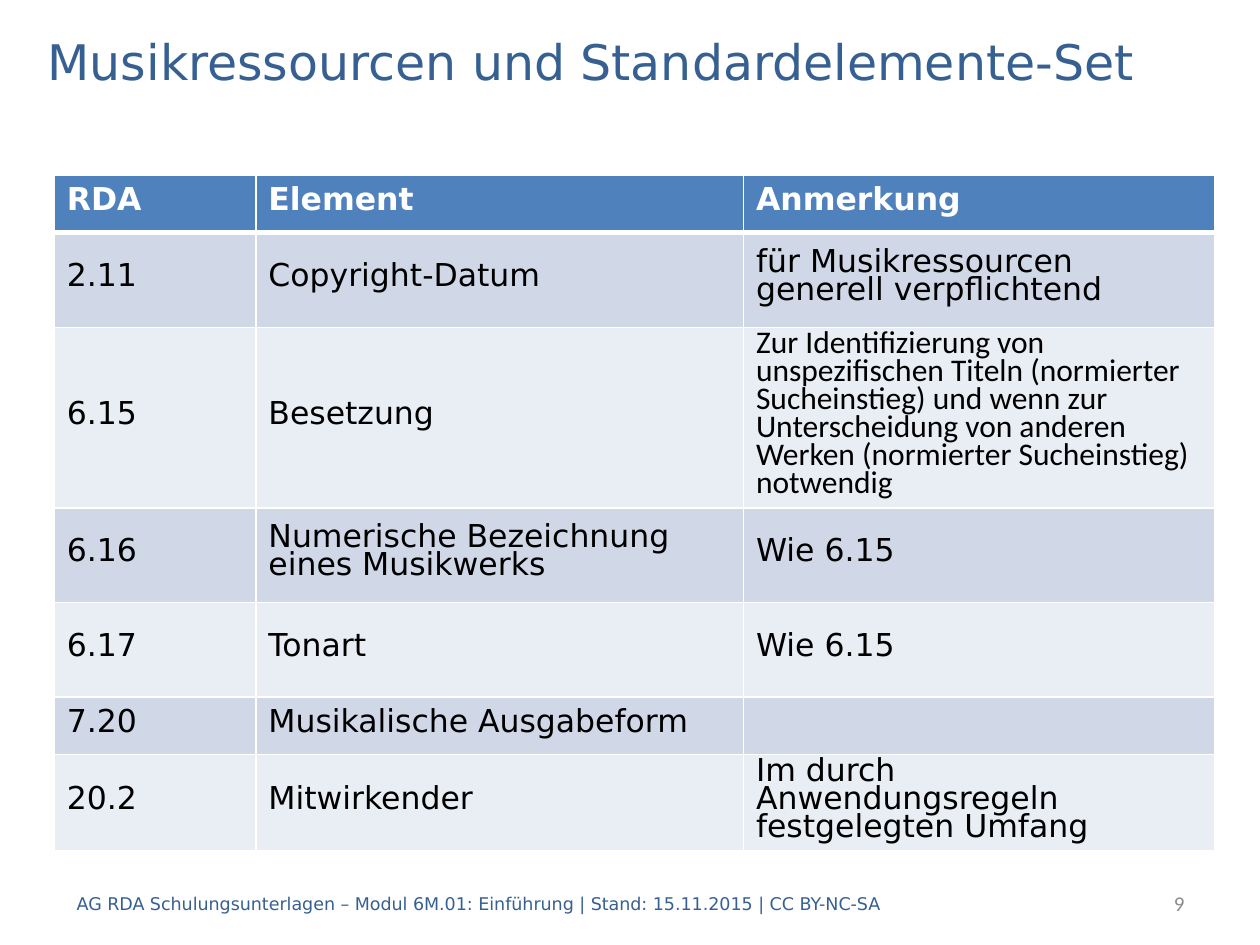
"""Build a slide with a table of music elements in the RDA standard set."""
import lxml.etree
import pptx
import pptx.dml.color
import pptx.enum.text
import pptx.oxml.ns
import pptx.util

Pt = pptx.util.Pt
RGBColor = pptx.dml.color.RGBColor
Align = pptx.enum.text.PP_ALIGN
Anchor = pptx.enum.text.MSO_ANCHOR
qn = pptx.oxml.ns.qn

WHITE = RGBColor(0xFF, 0xFF, 0xFF)
BLACK = RGBColor(0x00, 0x00, 0x00)
NAVY = RGBColor(0x37, 0x60, 0x92)
GREY = RGBColor(0x8C, 0x8C, 0x8C)
HEADER_FILL = RGBColor(0x4F, 0x81, 0xBD)
BAND_FILLS = (RGBColor(0xE9, 0xED, 0xF4), RGBColor(0xD0, 0xD8, 0xE8))

SANS = "DejaVu Sans"
CALIBRI = "Calibri"

COLUMN_WIDTHS = (115.2, 278.64, 269.28)
ROW_HEIGHTS = (33, 54, 103, 54, 54, 33, 55)
ROWS = (
    ("RDA", "Element", "Anmerkung"),
    ("2.11", "Copyright-Datum", "für Musikressourcen generell verpflichtend"),
    ("6.15", "Besetzung",
     "Zur Identifizierung von unspezifischen Titeln (normierter Sucheinstieg) "
     "und wenn zur Unterscheidung von anderen Werken (normierter Sucheinstieg) "
     "notwendig"),
    ("6.16", "Numerische Bezeichnung eines Musikwerks", "Wie 6.15"),
    ("6.17", "Tonart", "Wie 6.15"),
    ("7.20", "Musikalische Ausgabeform", ""),
    ("20.2", "Mitwirkender", "Im durch Anwendungsregeln festgelegten Umfang"),
)
CALIBRI_CELL = (2, 2)


class SlideBuilder:
    def __init__(self, page, font=SANS, color=NAVY):
        self.page = page
        self.font = font
        self.color = color

    def add_span(self, para, text, size, font=None, color=None, bold=False):
        span = para.add_run()
        span.text = text
        span.font.size = Pt(size)
        span.font.name = font or self.font
        span.font.color.rgb = self.color if color is None else color
        span.font.bold = bold

    def add_text(self, text, left, top, width, height, size,
                 align=Align.LEFT, font=None, color=None):
        box = self.page.shapes.add_textbox(Pt(left), Pt(top), Pt(width), Pt(height))
        box.text_frame.word_wrap = True
        box.text_frame.vertical_anchor = Anchor.MIDDLE
        para = box.text_frame.paragraphs[0]
        para.alignment = align
        self.add_span(para, text, size, font, color)

    def add_borders(self, cell, top, bottom):
        properties = cell._tc.get_or_add_tcPr()
        for side, width in (("L", 1), ("R", 1), ("T", top), ("B", bottom)):
            line = lxml.etree.SubElement(properties, qn(f"a:ln{side}"), w=str(Pt(width)))
            fill = lxml.etree.SubElement(line, qn("a:solidFill"))
            lxml.etree.SubElement(fill, qn("a:srgbClr"), val=str(WHITE))

    def fill_cell(self, cell, text, row, font):
        header = row == 0
        self.add_borders(cell, 3 if row == 1 else 1, 3 if header else 1)
        cell.fill.solid()
        cell.fill.fore_color.rgb = HEADER_FILL if header else BAND_FILLS[row % 2]
        para = cell.text_frame.paragraphs[0]
        if not header:
            cell.vertical_anchor = Anchor.MIDDLE
            para.line_spacing = Pt(16)
            para.space_before = para.space_after = Pt(6)
        if text:
            self.add_span(para, text, 18, font, WHITE if header else BLACK, header)

    def add_table(self, left, top, rows, widths, heights):
        frame = self.page.shapes.add_table(
            len(rows), len(widths), Pt(left), Pt(top), Pt(sum(widths)), Pt(sum(heights)))
        table = frame.table
        for column, width in zip(table.columns, widths):
            column.width = Pt(width)
        for row, (texts, height) in enumerate(zip(rows, heights)):
            table.rows[row].height = Pt(height)
            for column, text in enumerate(texts):
                font = CALIBRI if (row, column) == CALIBRI_CELL else SANS
                self.fill_cell(table.cell(row, column), text, row, font)


def main():
    deck = pptx.Presentation()
    deck.slide_width, deck.slide_height = Pt(720), Pt(540)
    builder = SlideBuilder(deck.slides.add_slide(deck.slide_layouts[6]))
    builder.add_table(31, 100, ROWS, COLUMN_WIDTHS, ROW_HEIGHTS)
    builder.add_text("Musikressourcen und Standardelemente-Set",
                     20.16, 14.4, 680.4, 40.32, 28)
    builder.add_text("9", 569.52, 501.84, 114.48, 28.8, 12,
                     Align.RIGHT, CALIBRI, GREY)
    builder.add_text("AG RDA Schulungsunterlagen – Modul 6M.01: Einführung | "
                     "Stand: 15.11.2015 | CC BY-NC-SA",
                     36.72, 501.84, 555.84, 28.8, 10)
    deck.save("out.pptx")


if __name__ == "__main__":
    main()
